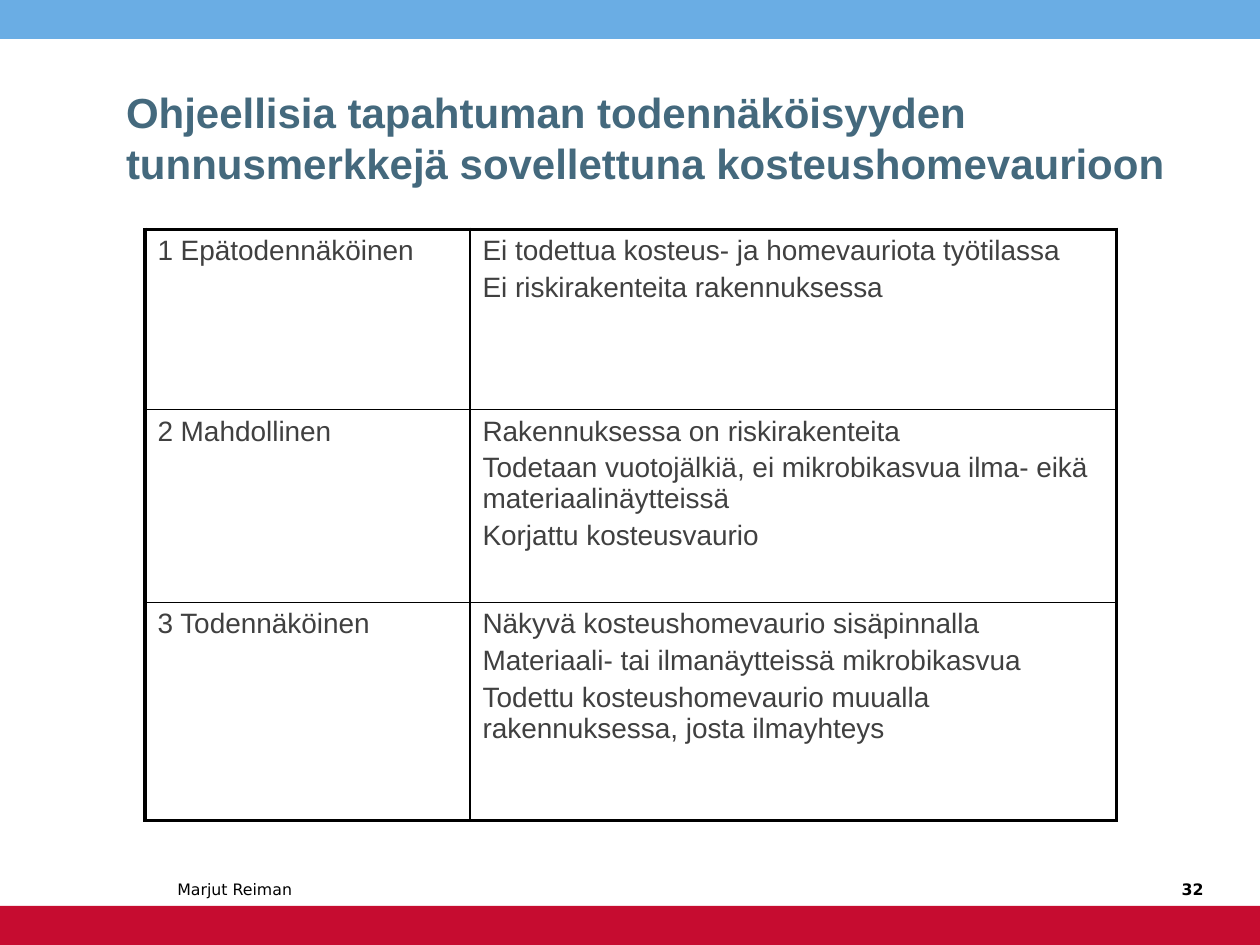
from dataclasses import dataclass

from lxml import etree
from pptx import Presentation
from pptx import util as u
from pptx.dml.color import RGBColor
from pptx.enum import shapes, text
from pptx.oxml.ns import qn


@dataclass(frozen=True)
class Theme:
    sky: str = "6AADE4"
    red: str = "C60C30"
    head: str = "44697D"
    body: str = "404040"
    ink: str = "000000"
    sans: str = "Arial"
    small: str = "DejaVu Sans"
    thick: float = 2.25
    thin: float = 1

    def font(self, role):
        return {
            "title": dict(name=self.sans, size=u.Pt(24), bold=True, color=self.head),
            "cell": dict(name=self.sans, size=u.Pt(16), bold=False, color=self.body),
            "foot": dict(name=self.small, size=u.Pt(9), bold=False, color=self.ink),
            "page": dict(name=self.small, size=u.Pt(9), bold=True, color=self.ink),
        }[role]


def place(shape, box):
    for key, size in zip(("left", "top", "width", "height"), box):
        setattr(shape, key, u.Inches(size))


class Deck:
    def __init__(self, theme):
        self.theme = theme
        self.prs = Presentation()
        self.prs.slide_width = u.Inches(10)
        self.prs.slide_height = u.Inches(7.5)
        self.slide = self.prs.slides.add_slide(self.prs.slide_layouts[5])

    def style(self, para, role, align=text.PP_ALIGN.LEFT):
        para.alignment = align
        for key, value in self.theme.font(role).items():
            if key == "color":
                para.font.color.rgb = RGBColor.from_string(value)
            else:
                setattr(para.font, key, value)

    def fill(self, frame, words, role, align=text.PP_ALIGN.LEFT):
        """Write one line of text at the foot of a wrapped frame."""
        form = dict(text=words, word_wrap=True,
                    auto_size=text.MSO_AUTO_SIZE.NONE,
                    vertical_anchor=text.MSO_ANCHOR.BOTTOM)
        for key, value in form.items():
            setattr(frame, key, value)
        self.style(frame.paragraphs[0], role, align)

    def band(self, top, color):
        bar = self.slide.shapes.add_shape(
            shapes.MSO_SHAPE.RECTANGLE, 0, u.Inches(top),
            self.prs.slide_width, u.Inches(0.31))
        bar.shadow.inherit = False
        bar.fill.solid()
        bar.fill.fore_color.rgb = RGBColor.from_string(color)
        bar.line.fill.background()

    def title(self, words, box):
        head = self.slide.shapes.title
        place(head, box)
        self.fill(head.text_frame, words, "title")

    def label(self, words, box, role, align=text.PP_ALIGN.LEFT):
        note = self.slide.shapes.add_textbox(*map(u.Inches, box))
        self.fill(note.text_frame, words, role, align)

    def border(self, cell, widths):
        props = cell._tc.get_or_add_tcPr()
        for side, width in widths.items():
            line = etree.SubElement(props, qn("a:ln" + side), w=str(u.Pt(width)))
            paint = etree.SubElement(line, qn("a:solidFill"))
            etree.SubElement(paint, qn("a:srgbClr"), val=self.theme.ink)

    def cell(self, cell, lines, widths):
        self.border(cell, widths)
        cell.fill.background()
        cell.text = "\n".join(lines)
        for i, para in enumerate(cell.text_frame.paragraphs):
            self.style(para, "cell")
            para.space_before = u.Pt(3.2 if i else 0)

    def table(self, rows, box, wide, high):
        """Draw a grid with a thick frame and thin inner lines."""
        grid = self.slide.shapes.add_table(
            len(rows), len(wide), *map(u.Inches, box)).table
        grid.first_row = grid.horz_banding = False
        for col, size in zip(grid.columns, wide):
            col.width = u.Inches(size)
        for row, size in zip(grid.rows, high):
            row.height = u.Inches(size)
        for r, row in enumerate(rows):
            for c, lines in enumerate(row):
                edges = dict(L=c == 0, R=c == len(wide) - 1,
                             T=r == 0, B=r == len(rows) - 1)
                widths = {side: self.theme.thick if outer else self.theme.thin
                          for side, outer in edges.items()}
                self.cell(grid.cell(r, c), lines, widths)


ROWS = [
    (["1 Epätodennäköinen"],
     ["Ei todettua kosteus- ja homevauriota työtilassa",
      "Ei riskirakenteita rakennuksessa"]),
    (["2 Mahdollinen"],
     ["Rakennuksessa on riskirakenteita",
      "Todetaan vuotojälkiä, ei mikrobikasvua ilma- eikä materiaalinäytteissä",
      "Korjattu kosteusvaurio"]),
    (["3 Todennäköinen"],
     ["Näkyvä kosteushomevaurio sisäpinnalla",
      "Materiaali- tai ilmanäytteissä mikrobikasvua",
      "Todettu kosteushomevaurio muualla rakennuksessa, josta ilmayhteys"]),
]


def main():
    theme = Theme()
    deck = Deck(theme)
    deck.band(0, theme.sky)
    deck.band(7.19, theme.red)
    deck.title("Ohjeellisia tapahtuman todennäköisyyden tunnusmerkkejä "
               "sovellettuna kosteushomevaurioon", (0.9, 0.36, 8.74, 1.18))
    deck.label("Marjut Reiman", (1.31, 6.78, 1.97, 0.4), "foot")
    deck.label("32", (9.1, 6.78, 0.55, 0.4), "page", text.PP_ALIGN.RIGHT)
    deck.table(ROWS, (1.15, 1.82, 7.71, 4.69), (2.58, 5.13), (1.43, 1.53, 1.73))
    deck.prs.save("out.pptx")


if __name__ == "__main__":
    main()
